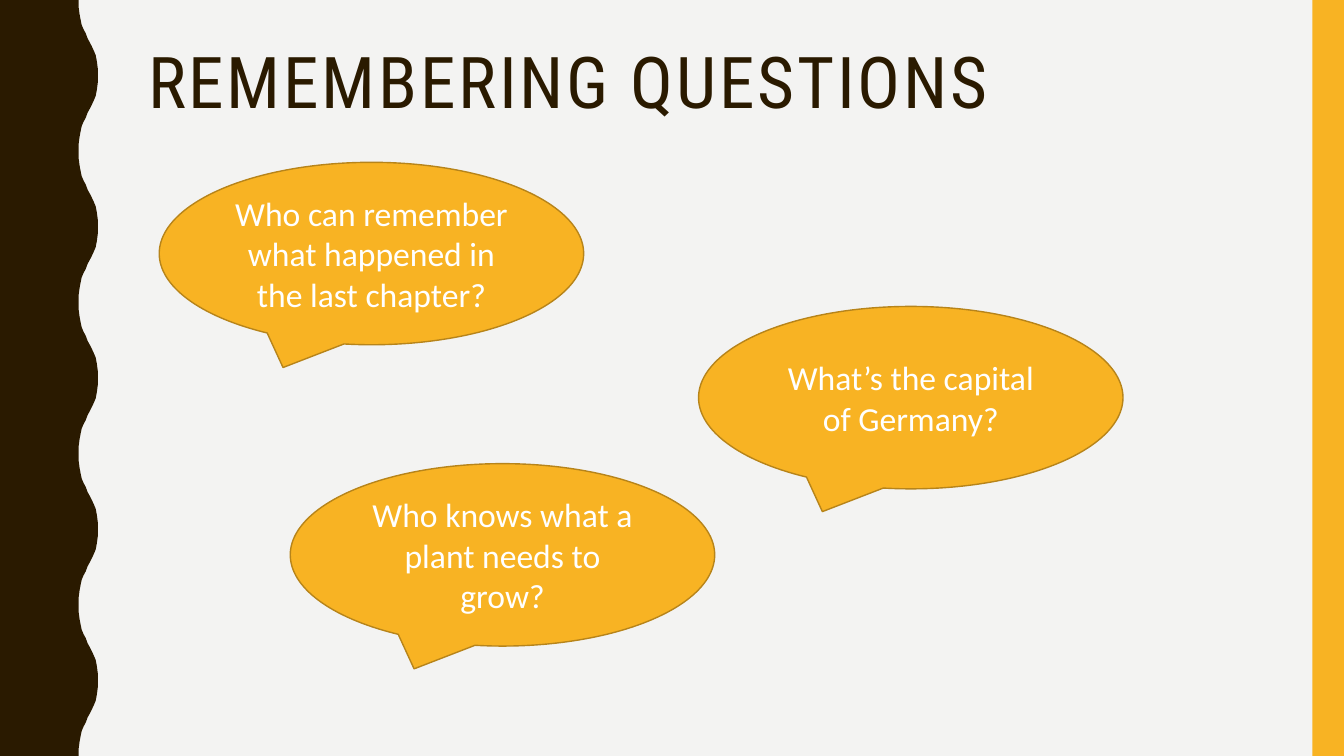
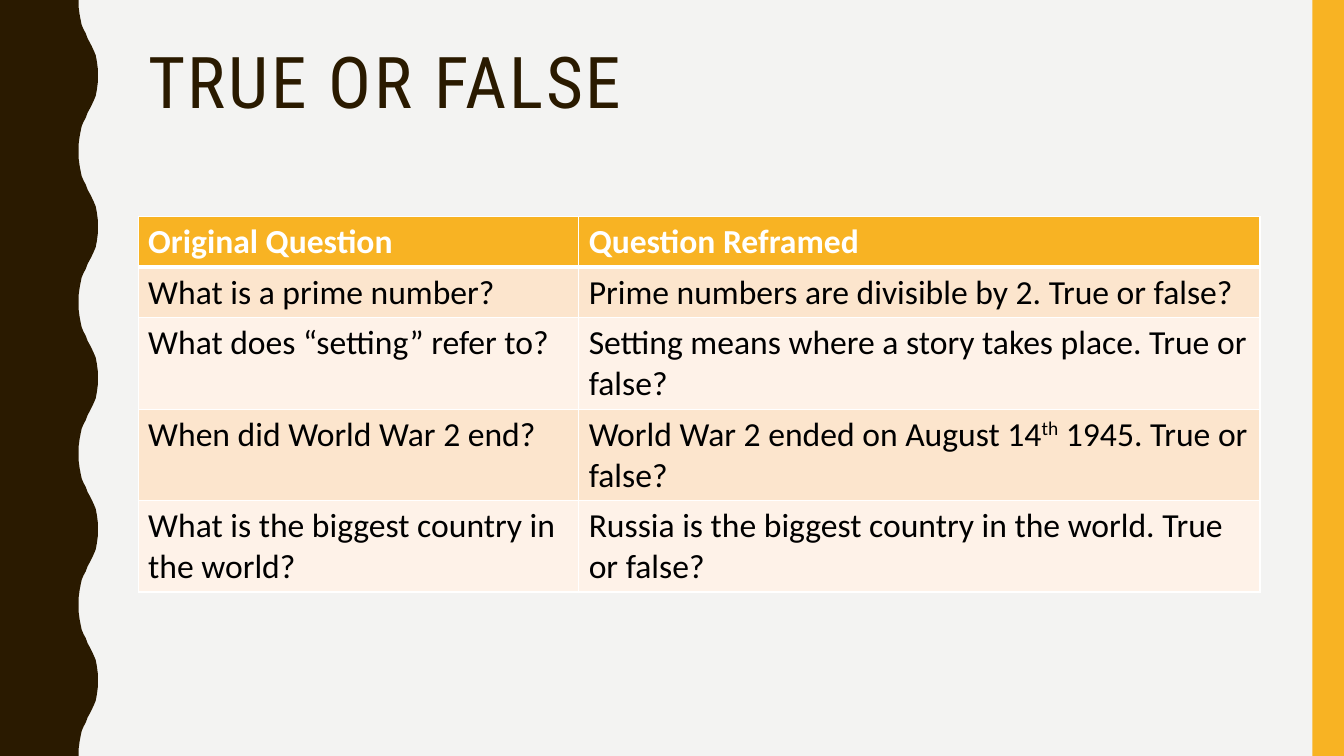
from dataclasses import dataclass
from typing import NamedTuple

from lxml.etree import SubElement
from pptx import Presentation
from pptx.dml.color import RGBColor
from pptx.enum.shapes import MSO_SHAPE as Shape
from pptx.enum.text import MSO_ANCHOR as Anchor, PP_ALIGN as Align
from pptx.oxml import parse_xml
from pptx.oxml.ns import nsdecls, qn
from pptx.util import Inches, Pt

# Shared look
PAPER = RGBColor(0xF3, 0xF3, 0xF2)
BROWN = RGBColor(0x2A, 0x1A, 0x00)
GOLD = RGBColor(0xF8, 0xB3, 0x23)
DARK_GOLD = RGBColor(0xB7, 0x84, 0x1A)
WHITE = RGBColor(0xFF, 0xFF, 0xFF)
BLACK = RGBColor(0x00, 0x00, 0x00)
PEACH = RGBColor(0xFC, 0xE5, 0xCD)
PALE_PEACH = RGBColor(0xFE, 0xF2, 0xE8)
TITLE_FONT, BODY_FONT = "Roboto Condensed", "Calibri"
TITLE_SIZE, BODY_SIZE = Pt(51), Pt(24)
TITLE_SPACING = 200  # hundredths of a point

WIDTH, HEIGHT = Inches(13.333), Inches(7.5)


def across(percent: float) -> int:
    return round(WIDTH * percent / 100)


def down(percent: float) -> int:
    return round(HEIGHT * percent / 100)


class Area(NamedTuple):
    """A rectangle in percent of the slide's width and height."""
    left: float
    top: float
    width: float
    height: float

    def lengths(self) -> tuple[int, int, int, int]:
        return (across(self.left), down(self.top),
                across(self.width), down(self.height))


@dataclass(frozen=True)
class Bubble:
    left: float
    top: float
    text: str


@dataclass(frozen=True)
class Row:
    height: float
    question: str
    reframed: str


TITLE_AREA = Area(10.28, 5.6, 83.48, 21.73)
STRIPE_AREA = Area(97.65, 0, 2.35, 100)

# Wavy band: five waves, each a swell and its mirror image
WAVES = 5
TROUGH, CREST = 5.85, 7.28
SWELL = [(0, 0), (0, 0.09), (0.05, 0.19), (0.11, 0.27), (0.16, 0.33),
         (0.26, 0.39), (0.37, 0.44), (0.47, 0.51), (0.58, 0.56),
         (0.68, 0.61), (0.79, 0.67), (0.89, 0.73), (0.95, 0.81),
         (1, 0.91), (1, 1)]

BUBBLE_WIDTH, BUBBLE_HEIGHT = 31.58, 24.13
BUBBLES = [
    Bubble(11.85, 21.47, "Who can remember what happened in the last chapter?"),
    Bubble(21.6, 61.33, "Who knows what a plant needs to grow?"),
    Bubble(51.98, 40.53, "What’s the capital of Germany?"),
]

TABLE_TOP = 28.67
COLUMN_WIDTHS = (32.78, 50.7)
ONE_LINE, TWO_LINES = 6.67, 12.1
SUPERSCRIPT_MARK = "^"  # text between two marks is raised
ROWS = [
    Row(ONE_LINE, "Original Question", "Question Reframed"),
    Row(ONE_LINE, "What is a prime number?",
        "Prime numbers are divisible by 2. True or false?"),
    Row(TWO_LINES, "What does “setting” refer to?",
        "Setting means where a story takes place. True or false?"),
    Row(TWO_LINES, "When did World War 2 end?",
        "World War 2 ended on August 14^th^ 1945. True or false?"),
    Row(TWO_LINES, "What is the biggest country in the world?",
        "Russia is the biggest country in the world. True or false?"),
]


def set_font(para, name: str, size: int, color: RGBColor, bold: bool = False) -> None:
    font = para.font
    font.name, font.size, font.bold = name, size, bold
    font.color.rgb = color


def paint(shape, fill: RGBColor, line: RGBColor | None = None) -> None:
    shape.shadow.inherit = False
    shape.fill.solid()
    shape.fill.fore_color.rgb = fill
    if line is None:
        shape.line.fill.background()
    else:
        shape.line.color.rgb = line
        shape.line.width = Pt(1)


def draw_wavy_band(page) -> None:
    half = 100 / WAVES / 2
    edge = []
    for wave in range(WAVES):
        start = wave * 2 * half
        edge += [(x, start + y * half) for x, y in SWELL]
        edge += [(x, start + (2 - y) * half) for x, y in reversed(SWELL)]
    points = [(across(TROUGH + x * (CREST - TROUGH)), down(y)) for x, y in edge]
    builder = page.shapes.build_freeform(0, 0)
    builder.add_line_segments(points + [(0, HEIGHT)], close=True)
    paint(builder.convert_to_shape(), BROWN)


def add_page(deck, title: str):
    """Add a page with the band, the stripe and its title."""
    page = deck.slides.add_slide(deck.slide_layouts[6])
    draw_wavy_band(page)
    paint(page.shapes.add_shape(Shape.RECTANGLE, *STRIPE_AREA.lengths()), GOLD)
    box = page.shapes.add_textbox(*TITLE_AREA.lengths())
    box.text_frame.word_wrap = True
    para = box.text_frame.paragraphs[0]
    para.line_spacing = 0.9
    span = para.add_run()
    span.text = title
    span._r.get_or_add_rPr().set("spc", str(TITLE_SPACING))
    set_font(para, TITLE_FONT, TITLE_SIZE, BROWN)
    return page


def draw_bubble(page, bubble: Bubble) -> None:
    area = Area(bubble.left, bubble.top, BUBBLE_WIDTH, BUBBLE_HEIGHT)
    shape = page.shapes.add_shape(Shape.OVAL_CALLOUT, *area.lengths())
    paint(shape, GOLD, DARK_GOLD)
    frame = shape.text_frame
    frame.word_wrap = True
    frame.vertical_anchor = Anchor.MIDDLE
    para = frame.paragraphs[0]
    para.text = bubble.text
    para.alignment = Align.CENTER
    set_font(para, BODY_FONT, BODY_SIZE, WHITE)


def set_borders(cell, top: int, bottom: int) -> None:
    """White cell borders; widths in points."""
    widths = {"lnL": 1, "lnR": 1, "lnT": top, "lnB": bottom}
    properties = cell._tc.get_or_add_tcPr()
    for position, (tag, width) in enumerate(widths.items()):
        line = parse_xml(f'<a:{tag} {nsdecls("a")} w="{Pt(width)}"/>')
        fill = SubElement(line, qn("a:solidFill"))
        SubElement(fill, qn("a:srgbClr"), val=str(WHITE))
        properties.insert(position, line)


def fill_cell(cell, text: str, row_number: int) -> None:
    header = row_number == 0
    cell.fill.solid()
    cell.fill.fore_color.rgb = (
        GOLD if header else PEACH if row_number % 2 else PALE_PEACH)
    set_borders(cell, top=3 if row_number == 1 else 1, bottom=3 if header else 1)
    para = cell.text_frame.paragraphs[0]
    for number, piece in enumerate(text.split(SUPERSCRIPT_MARK)):
        span = para.add_run()
        span.text = piece
        if number % 2:
            span._r.get_or_add_rPr().set("baseline", "30000")
    set_font(para, BODY_FONT, BODY_SIZE, WHITE if header else BLACK, header)


def draw_table(page, rows: list[Row]) -> None:
    area = Area(TITLE_AREA.left, TABLE_TOP, sum(COLUMN_WIDTHS),
                sum(row.height for row in rows))
    table = page.shapes.add_table(
        len(rows), len(COLUMN_WIDTHS), *area.lengths()).table
    table.horz_banding = False
    for column, width in zip(table.columns, COLUMN_WIDTHS):
        column.width = across(width)
    for number, row in enumerate(rows):
        table.rows[number].height = down(row.height)
        for column, text in enumerate((row.question, row.reframed)):
            fill_cell(table.cell(number, column), text, number)


def main() -> None:
    deck = Presentation()
    deck.slide_width, deck.slide_height = WIDTH, HEIGHT
    backdrop = deck.slide_master.background.fill
    backdrop.solid()
    backdrop.fore_color.rgb = PAPER

    # Speech bubbles
    page = add_page(deck, "REMEMBERING QUESTIONS")
    for bubble in BUBBLES:
        draw_bubble(page, bubble)

    # Question table
    draw_table(add_page(deck, "TRUE OR FALSE"), ROWS)

    deck.save("out.pptx")


if __name__ == "__main__":
    main()
